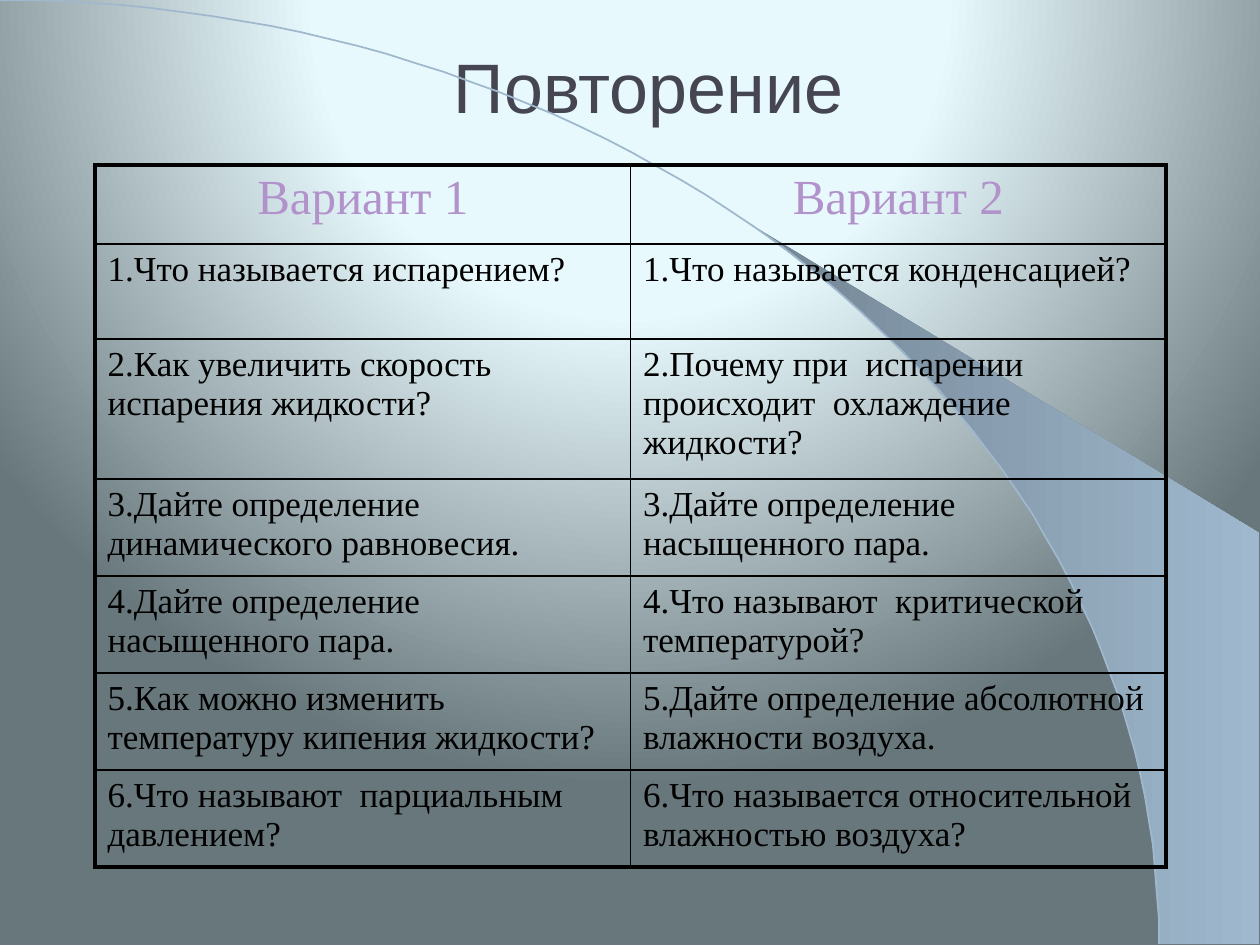
from math import asin, cos, pi, sin

from pptx import Presentation
from pptx.dml.color import RGBColor
from pptx.enum.text import MSO_ANCHOR, MSO_AUTO_SIZE, PP_ALIGN
from pptx.oxml import parse_xml
from pptx.oxml.ns import nsdecls, qn
from pptx.util import Pt

CENTER, LEFT = PP_ALIGN.CENTER, PP_ALIGN.LEFT
MIDDLE, NO_FIT = MSO_ANCHOR.MIDDLE, MSO_AUTO_SIZE.NONE
SCALE = 914400 / 126
TITLE_ONLY = 5
BLACK, SKY = "000000", "9FB8CD"
BACKDROP = [(0, "EBFBFE"), (40, "E8F9FD"), (100, "68777B")]
ROW_HEIGHTS = [79, 95, 140, 97, 97, 97, 97]
QUESTIONS = [
    ("Вариант 1", "Вариант 2"),
    ("1.Что называется испарением?", "1.Что называется конденсацией?"),
    ("2.Как увеличить скорость испарения жидкости?",
     "2.Почему при  испарении происходит  охлаждение жидкости?"),
    ("3.Дайте определение динамического равновесия.",
     "3.Дайте определение насыщенного пара."),
    ("4.Дайте определение насыщенного пара.",
     "4.Что называют  критической температурой?"),
    ("5.Как можно изменить температуру кипения жидкости?",
     "5.Дайте определение абсолютной влажности воздуха."),
    ("6.Что называют  парциальным давлением?",
     "6.Что называется относительной влажностью воздуха?"),
]


def px(length):
    return round(length * SCALE)


def rgb(color):
    return RGBColor.from_string(color)


def write(frame, text, *, size, color, font, align=LEFT, before=0):
    """Fill a text frame; before is the space above in percent of a line."""
    paragraph = frame.paragraphs[0]
    paragraph.alignment = align
    if before:
        paragraph._p.get_or_add_pPr().append(parse_xml(
            f'<a:spcBef {nsdecls("a")}><a:spcPct val="{before * 1000}"/></a:spcBef>'))
    run = paragraph.add_run()
    run.text = text
    run.font.size = Pt(size)
    run.font.name = font
    run.font.color.rgb = rgb(color)


def paint_background(slide):
    slide.background.fill.gradient()
    plain = slide.element.find(".//" + qn("a:gradFill"))
    stops = "".join(
        f'<a:gs pos="{position * 1000}"><a:srgbClr val="{color}"/></a:gs>'
        for position, color in BACKDROP)
    radial = parse_xml(
        f'<a:gradFill {nsdecls("a")} rotWithShape="1"><a:gsLst>{stops}</a:gsLst>'
        '<a:path path="circle"><a:fillToRect l="50000" t="-80000" r="50000" '
        'b="180000"/></a:path></a:gradFill>')
    plain.getparent().replace(plain, radial)


def quarter_ellipse(left, top, width, height, start=0, steps=60):
    """Points from the top of the curve down to its right end."""
    angles = [start + (pi / 2 - start) * i / steps for i in range(steps + 1)]
    return [(left + width * sin(a), top + height * (1 - cos(a))) for a in angles]


def add_outline(slide, points, close):
    builder = slide.shapes.build_freeform(*points[0], scale=SCALE)
    builder.add_line_segments(points[1:], close=close)
    outline = builder.convert_to_shape()
    outline.shadow.inherit = False
    return outline


def add_swoosh(slide, left, top, width, height):
    """Arc across the box with a shaded wedge outside its lower part."""
    arc_width, wedge_x, wedge_y = width - 100, 742, 533
    start = asin(wedge_x / arc_width)
    edge = quarter_ellipse(left, top, arc_width, height, start)
    corners = [(left + width, top + height), (left + width, top + wedge_y)]
    wedge = add_outline(slide, edge + corners, True)
    wedge.fill.gradient()
    wedge.fill.gradient_angle = 0
    for stop, color in zip(wedge.fill.gradient_stops, ("728493", SKY)):
        stop.color.rgb = rgb(color)
    wedge.line.fill.background()

    arc = add_outline(slide, quarter_ellipse(left, top, arc_width, height), False)
    arc.fill.background()
    arc.line.color.rgb = rgb(SKY)
    arc.line.width = Pt(1)


def place_title(slide, left, top, width, height):
    title = slide.shapes.title
    title.left, title.top = px(left), px(top)
    title.width, title.height = px(width), px(height)
    frame = title.text_frame
    frame.auto_size = NO_FIT
    frame.vertical_anchor = MIDDLE
    write(frame, "Повторение", size=40, color="464653", font="Arial", align=CENTER)


def set_borders(cell, widths):
    """Draw black borders, widths in points by side name."""
    properties = cell._tc.get_or_add_tcPr()
    for side, width in widths.items():
        properties.append(parse_xml(
            f'<a:ln{side} {nsdecls("a")} w="{Pt(width)}"><a:solidFill>'
            f'<a:srgbClr val="{BLACK}"/></a:solidFill></a:ln{side}>'))


def add_questions(slide, left, top, width):
    row_count, column_count = len(QUESTIONS), len(QUESTIONS[0])
    table = slide.shapes.add_table(
        row_count, column_count, px(left), px(top), px(width),
        px(sum(ROW_HEIGHTS))).table
    table.first_row = table.horz_banding = False
    for row, height in zip(table.rows, ROW_HEIGHTS):
        row.height = px(height)
    for r, variants in enumerate(QUESTIONS):
        for c, question in enumerate(variants):
            cell = table.cell(r, c)
            outer = {"L": c == 0, "R": c == column_count - 1,
                     "T": r == 0, "B": r == row_count - 1}
            set_borders(cell, {side: 2.25 if edge else 1
                               for side, edge in outer.items()})
            cell.fill.background()
            look = (dict(size=28, color="B292CA", align=CENTER) if r == 0
                    else dict(size=20, color=BLACK))
            write(cell.text_frame, question, font="Times New Roman",
                  before=20, **look)


def main():
    deck = Presentation()
    deck.slide_width, deck.slide_height = px(1260), px(945)
    slide = deck.slides.add_slide(deck.slide_layouts[TITLE_ONLY])
    paint_background(slide)
    add_swoosh(slide, 0, 0, 1259, 944)
    place_title(slide, 113, 45, 1071, 80)
    add_questions(slide, 95, 165, 1071)
    deck.save("out.pptx")


if __name__ == "__main__":
    main()
